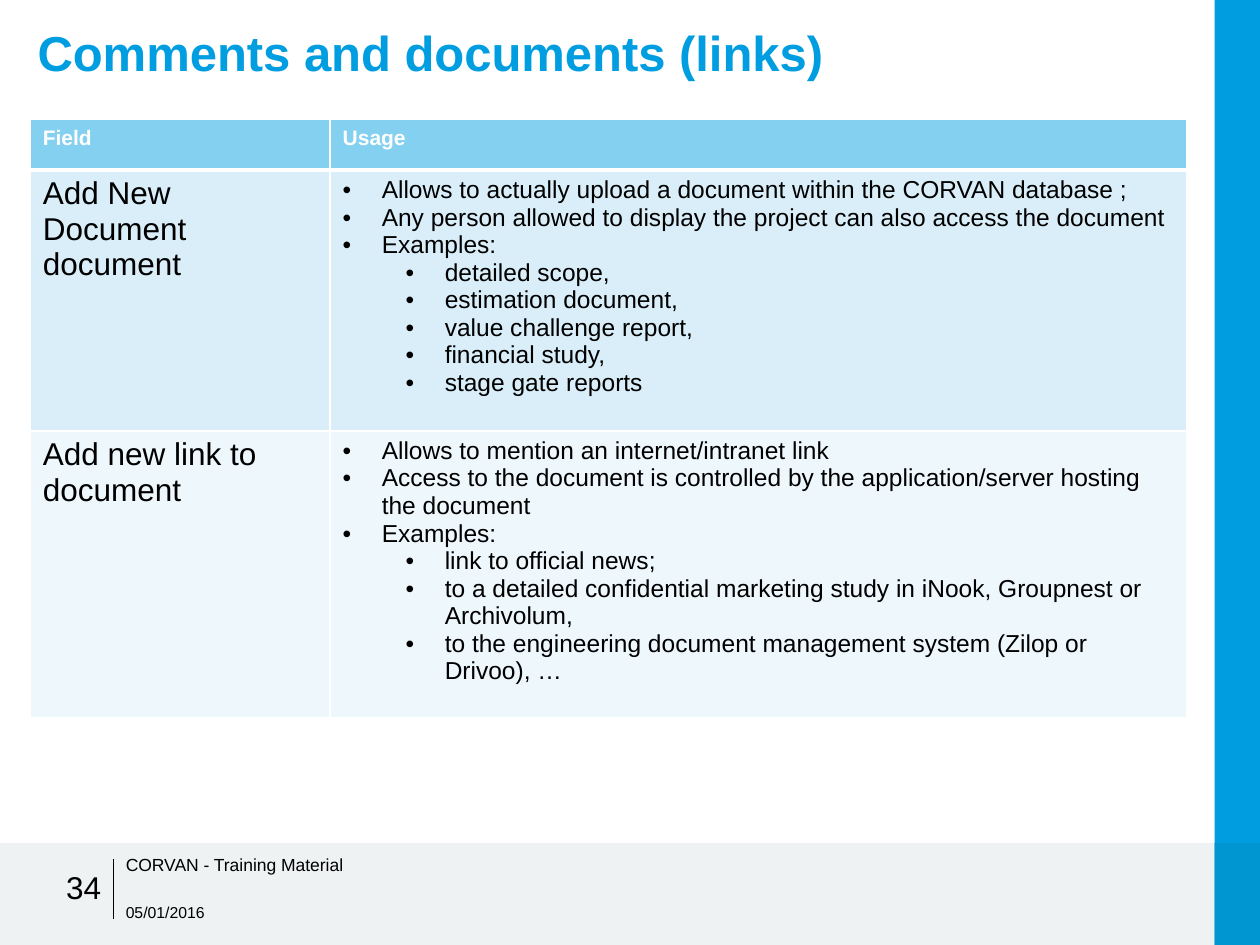
from lxml import etree
from pptx import Presentation
from pptx.dml.color import RGBColor
from pptx.enum.shapes import MSO_CONNECTOR, MSO_SHAPE
from pptx.enum.text import MSO_ANCHOR, PP_ALIGN
from pptx.oxml.ns import qn
from pptx.util import Inches, Pt

FONT = "Arial"
COLORS = {
    "accent": "009EE0",
    "accent_dark": "0096D2",
    "footer": "BDC7C8",
    "header": "84D0F0",
    "row_odd": "D9EEF9",
    "row_even": "EDF7FC",
    "text": "000000",
    "white": "FFFFFF",
}

# Each entry: field, then its usage as (level, text)
ENTRIES = [
    ("Add New Document document", [
        (0, "Allows to actually upload a document within the CORVAN database ;"),
        (0, "Any person allowed to display the project can also access the document"),
        (0, "Examples:"),
        (1, "detailed scope,"),
        (1, "estimation document,"),
        (1, "value challenge report,"),
        (1, "financial study,"),
        (1, "stage gate reports"),
    ]),
    ("Add new link to document", [
        (0, "Allows to mention an internet/intranet link"),
        (0, "Access to the document is controlled by the application/server hosting the document"),
        (0, "Examples:"),
        (1, "link to official news;"),
        (1, "to a detailed confidential marketing study in iNook, Groupnest or Archivolum,"),
        (1, "to the engineering document management system (Zilop or Drivoo), …"),
    ]),
]
COLUMN_WIDTHS = [2.38, 6.8]
ROW_HEIGHTS = [0.4, 2.07, 2.28]


def rgb(name):
    return RGBColor.from_string(COLORS[name])


def style(paragraph, size, color="text", bold=False):
    font = paragraph.font
    font.name, font.size, font.bold = FONT, Pt(size), bold
    font.color.rgb = rgb(color)


def add_band(slide, left, top, width, height, color, opacity=None):
    band = slide.shapes.add_shape(
        MSO_SHAPE.RECTANGLE, Inches(left), Inches(top), Inches(width), Inches(height))
    band.shadow.inherit = False
    band.fill.solid()
    band.fill.fore_color.rgb = rgb(color)
    band.line.fill.background()
    if opacity is not None:
        fill_color = next(band.fill._xPr.iter(qn("a:srgbClr")))
        etree.SubElement(fill_color, qn("a:alpha"), val=str(opacity * 1000))


def add_rule(slide, x, top, bottom):
    rule = slide.shapes.add_connector(
        MSO_CONNECTOR.STRAIGHT, Inches(x), Inches(top), Inches(x), Inches(bottom))
    rule.line.color.rgb = rgb("text")
    rule.line.width = Pt(0.75)
    etree.SubElement(rule._element.spPr, qn("a:effectLst"))


def add_label(slide, left, top, width, height, text, size, color="text",
              bold=False, anchor=MSO_ANCHOR.MIDDLE, align=PP_ALIGN.LEFT):
    frame = slide.shapes.add_textbox(
        Inches(left), Inches(top), Inches(width), Inches(height)).text_frame
    frame.word_wrap = True
    frame.vertical_anchor = anchor
    paragraph = frame.paragraphs[0]
    paragraph.text = text
    paragraph.alignment = align
    style(paragraph, size, color, bold)
    return paragraph


def format_cell(cell, fill, bottom=1, top=1):
    """Give a cell white borders (widths in points) and a plain fill."""
    properties = cell._tc.get_or_add_tcPr()
    for side, width in (("L", 1), ("R", 1), ("T", top), ("B", bottom)):
        border = etree.SubElement(properties, qn(f"a:ln{side}"), w=str(Pt(width)))
        solid = etree.SubElement(border, qn("a:solidFill"))
        etree.SubElement(solid, qn("a:srgbClr"), val=COLORS["white"])
    cell.fill.solid()
    cell.fill.fore_color.rgb = rgb(fill)


def write_cell(cell, text, size, color="text", bold=False):
    paragraph = cell.text_frame.paragraphs[0]
    paragraph.text = text
    style(paragraph, size, color, bold)


def write_bullets(cell, items):
    frame = cell.text_frame
    for index, (level, text) in enumerate(items):
        paragraph = frame.add_paragraph() if index else frame.paragraphs[0]
        paragraph.text = text
        paragraph.level = level
        properties = paragraph._p.get_or_add_pPr()
        properties.set("marL", str(Inches(0.31 + 0.5 * level)))
        properties.set("indent", str(Inches(-0.31)))
        etree.SubElement(properties, qn("a:buFont"), typeface=FONT)
        etree.SubElement(properties, qn("a:buChar"), char="•")
        style(paragraph, 14)


def add_usage_table(slide):
    table = slide.shapes.add_table(
        len(ROW_HEIGHTS), len(COLUMN_WIDTHS), Inches(0.24), Inches(0.95),
        Inches(sum(COLUMN_WIDTHS)), Inches(sum(ROW_HEIGHTS))).table
    table.horz_banding = False
    for column, width in zip(table.columns, COLUMN_WIDTHS):
        column.width = Inches(width)
    for row, height in zip(table.rows, ROW_HEIGHTS):
        row.height = Inches(height)

    for column, heading in enumerate(("Field", "Usage")):
        cell = table.cell(0, column)
        write_cell(cell, heading, 12, "white", bold=True)
        format_cell(cell, "header", bottom=3)
    for row, (field, usage) in enumerate(ENTRIES, start=1):
        field_cell, usage_cell = table.cell(row, 0), table.cell(row, 1)
        write_cell(field_cell, field, 18)
        write_bullets(usage_cell, usage)
        for cell in (field_cell, usage_cell):
            format_cell(cell, "row_odd" if row % 2 else "row_even",
                        top=3 if row == 1 else 1)


def main():
    deck = Presentation()
    deck.slide_width, deck.slide_height = Inches(10), Inches(7.5)
    slide = deck.slides.add_slide(deck.slide_layouts[6])

    add_band(slide, 0, 6.69, 10, 0.81, "footer", opacity=23)
    add_band(slide, 9.64, 0, 0.36, 7.5, "accent")
    add_band(slide, 9.64, 6.69, 0.36, 0.81, "accent_dark")
    add_rule(slide, 0.9, 6.82, 7.29)

    title = add_label(slide, 0.2, 0.16, 9, 1.25, "Comments and documents (links)",
                      28, "accent", bold=True, anchor=MSO_ANCHOR.TOP)
    title.line_spacing = 0.95
    add_label(slide, 0.9, 7.1, 2.33, 0.28, "05/01/2016", 9)
    add_label(slide, 0.9, 6.73, 3.17, 0.27, "CORVAN - Training Material", 10)
    add_label(slide, 0.25, 6.79, 0.65, 0.49, "34", 18, align=PP_ALIGN.RIGHT)
    add_usage_table(slide)

    deck.save("out.pptx")


if __name__ == "__main__":
    main()
